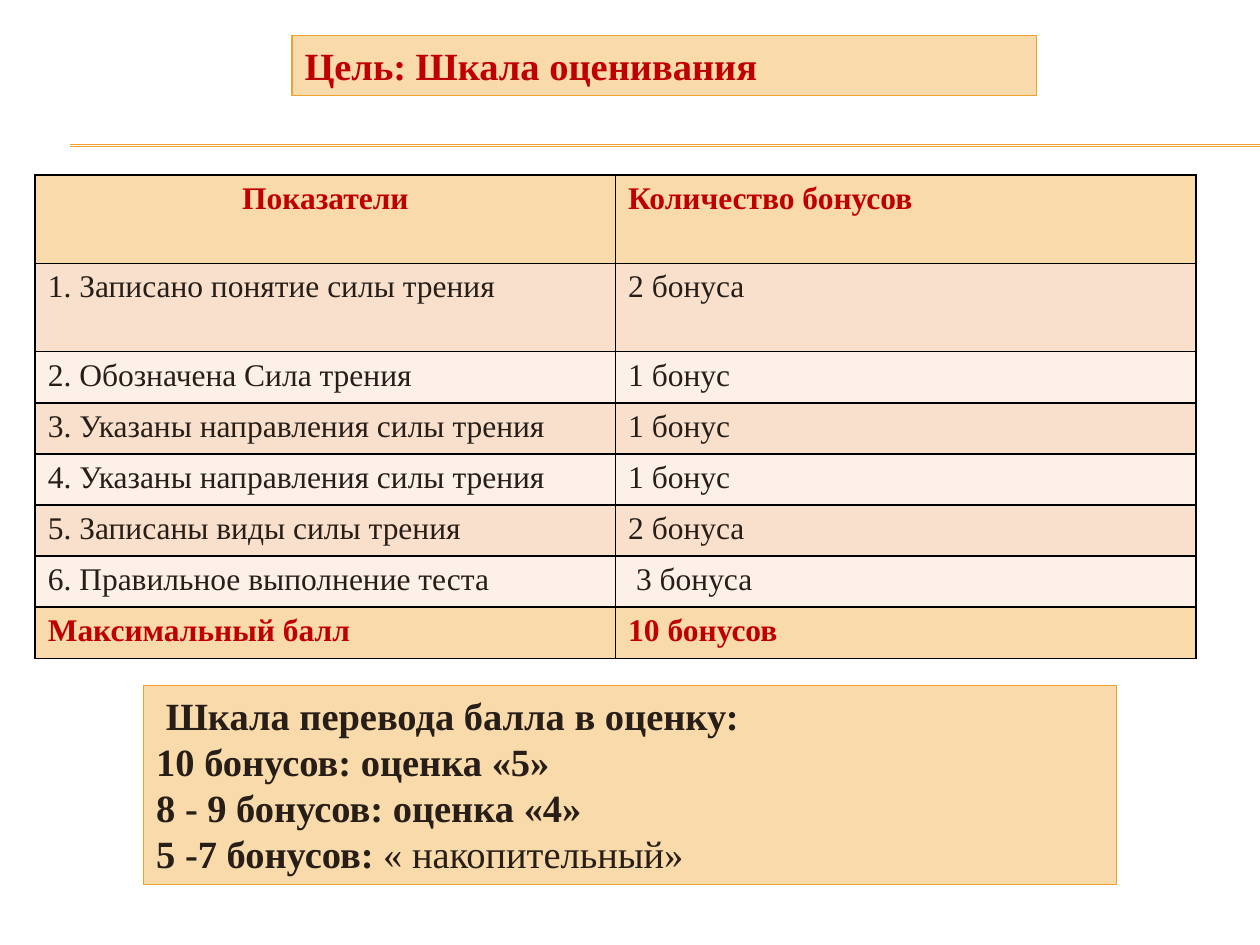
from dataclasses import dataclass

from lxml import etree
from pptx import Presentation
from pptx import util as u
from pptx.dml.color import RGBColor
from pptx.enum import shapes, text
from pptx.oxml import ns

FONT = "Times New Roman"
SAND, ORANGE, RED, DARK, BLACK = "F9DAAB", "F0A22E", "C00000", "271E18", "000000"
BANDS = ("F9E0CD", "FCF0E8")


@dataclass
class Run:
    text: str
    color: str = DARK
    bold: bool = True


@dataclass
class Panel:
    left: float
    top: float
    width: float
    height: float
    paragraphs: list[list[Run]]


@dataclass
class ScoreRow:
    indicator: str
    bonus: str
    height: float = 1.03


PANELS = [
    Panel(5.89, 0.72, 15.01, 1.2, [[Run("Цель: Шкала оценивания", RED)]]),
    Panel(2.9, 13.82, 19.61, 4.01, [
        [Run(" Шкала перевода балла в оценку:")],
        [Run("10 бонусов: оценка «5»")],
        [Run("8 - 9 бонусов: оценка «4»")],
        [Run("5 -7 бонусов: "), Run("« накопительный»", bold=False)],
    ]),
]

SCORES = [
    ScoreRow("Показатели", "Количество бонусов", 1.78),
    ScoreRow("1. Записано понятие силы трения", "2 бонуса", 1.78),
    ScoreRow("2. Обозначена Сила трения", "1 бонус"),
    ScoreRow("3. Указаны направления силы трения", "1 бонус"),
    ScoreRow("4. Указаны направления силы трения", "1 бонус"),
    ScoreRow("5. Записаны виды силы трения", "2 бонуса"),
    ScoreRow("6. Правильное выполнение теста", " 3 бонуса"),
    ScoreRow("Максимальный балл", "10 бонусов"),
]


def paint(color_format, value: str) -> None:
    color_format.rgb = RGBColor.from_string(value)


def fill_with(target, value: str) -> None:
    target.fill.solid()
    paint(target.fill.fore_color, value)


def outline(line) -> None:
    paint(line.color, ORANGE)
    line.width = u.Pt(0.75)


def add_text(paragraph, content: str, *, size: float, color: str, bold: bool) -> None:
    run = paragraph.add_run()
    run.text = content
    run.font.name = FONT
    run.font.size = u.Pt(size)
    run.font.bold = bold
    paint(run.font.color, color)


def draw_rule(slide, y: float) -> None:
    connector = slide.shapes.add_connector(
        shapes.MSO_CONNECTOR.STRAIGHT, u.Cm(1.42), u.Cm(y), u.Cm(25.4), u.Cm(y))
    outline(connector.line)
    etree.SubElement(connector._element.spPr, ns.qn("a:effectLst"))


def draw_panel(slide, panel: Panel) -> None:
    shape = slide.shapes.add_shape(
        shapes.MSO_SHAPE.RECTANGLE, u.Cm(panel.left), u.Cm(panel.top),
        u.Cm(panel.width), u.Cm(panel.height))
    shape.shadow.inherit = False
    fill_with(shape, SAND)
    outline(shape.line)
    frame = shape.text_frame
    frame.word_wrap = True
    frame.auto_size = text.MSO_AUTO_SIZE.SHAPE_TO_FIT_TEXT
    frame.vertical_anchor = text.MSO_ANCHOR.TOP
    for index, runs in enumerate(panel.paragraphs):
        paragraph = frame.add_paragraph() if index else frame.paragraphs[0]
        paragraph.alignment = text.PP_ALIGN.LEFT
        for run in runs:
            add_text(paragraph, run.text, size=22, color=run.color, bold=run.bold)


def add_borders(cell) -> None:
    properties = cell._tc.get_or_add_tcPr()
    for side in ("a:lnL", "a:lnR", "a:lnT", "a:lnB"):
        border = etree.SubElement(properties, ns.qn(side), w=str(u.Pt(1)))
        solid = etree.SubElement(border, ns.qn("a:solidFill"))
        etree.SubElement(solid, ns.qn("a:srgbClr"), val=BLACK)


def draw_table(slide, scores: list[ScoreRow]) -> None:
    height = sum(score.height for score in scores)
    table = slide.shapes.add_table(
        len(scores), 2, u.Cm(0.71), u.Cm(3.53), u.Cm(23.4), u.Cm(height)).table
    for index, score in enumerate(scores):
        table.rows[index].height = u.Cm(score.height)
        accented = index in (0, len(scores) - 1)
        for column, content in enumerate((score.indicator, score.bonus)):
            cell = table.cell(index, column)
            add_borders(cell)
            fill_with(cell, SAND if accented else BANDS[(index - 1) % 2])
            add_text(cell.text_frame.paragraphs[0], content, size=18,
                     color=RED if accented else DARK, bold=accented)
    table.cell(0, 0).text_frame.paragraphs[0].alignment = text.PP_ALIGN.CENTER


def main() -> None:
    presentation = Presentation()
    presentation.slide_width, presentation.slide_height = u.Cm(25.4), u.Cm(19.05)
    slide = presentation.slides.add_slide(presentation.slide_layouts[6])
    for y in (2.92, 2.95):
        draw_rule(slide, y)
    title, scale = PANELS
    draw_panel(slide, title)
    draw_table(slide, SCORES)
    draw_panel(slide, scale)
    presentation.save("out.pptx")


if __name__ == "__main__":
    main()
